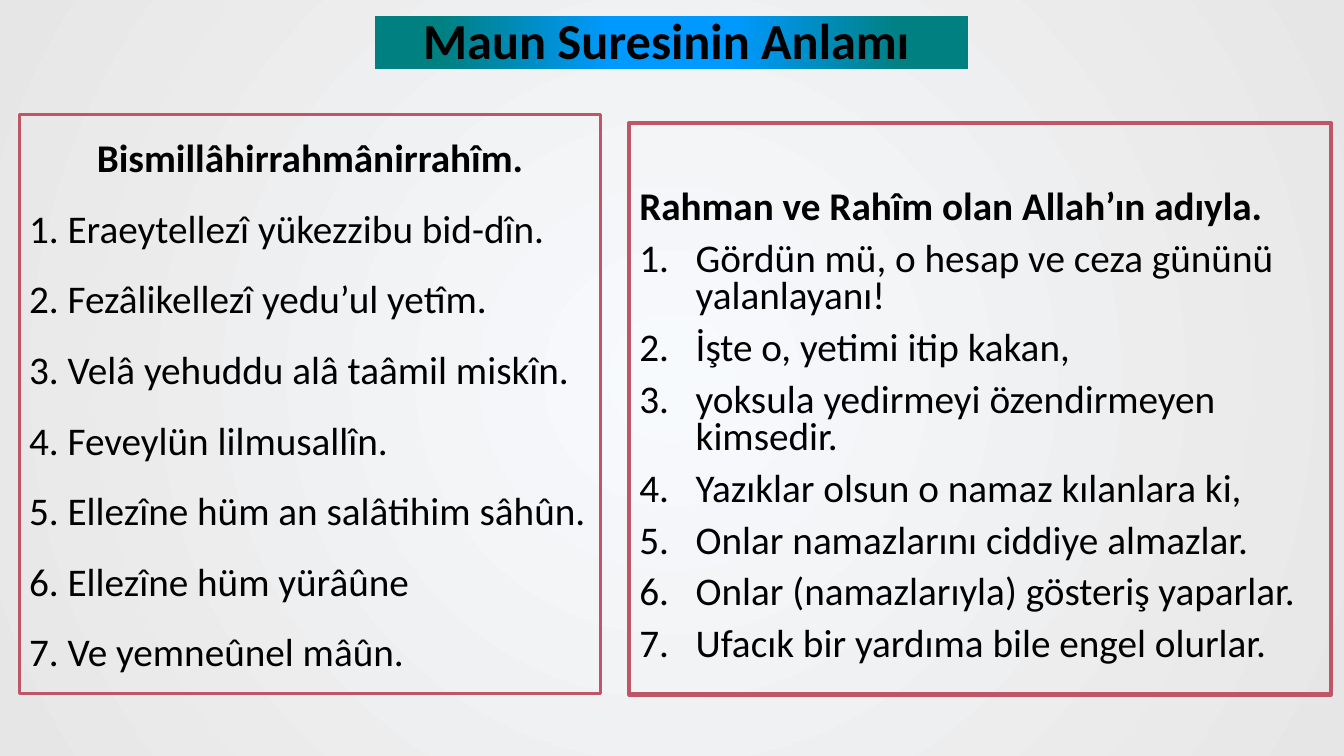
from pptx import Presentation
from pptx.dml.color import RGBColor as RGB
from pptx.enum.shapes import MSO_SHAPE as Shape
from pptx.enum.text import MSO_ANCHOR as Anchor, MSO_AUTO_SIZE as Fit, PP_ALIGN as Align
from pptx.oxml.ns import qn
from pptx.util import Inches, Pt
from lxml.etree import SubElement as Sub

TITLE = "Maun Suresinin Anlamı"
VERSES = {
    "head": "Bismillâhirrahmânirrahîm.",
    "lines": [
        "Eraeytellezî yükezzibu bid-dîn.",
        "Fezâlikellezî yedu’ul yetîm.",
        "Velâ yehuddu alâ taâmil miskîn.",
        "Feveylün lilmusallîn.",
        "Ellezîne hüm an salâtihim sâhûn.",
        "Ellezîne hüm yürâûne",
        "Ve yemneûnel mâûn.",
    ],
}
MEANING = {
    "head": "Rahman ve Rahîm olan Allah’ın adıyla.",
    "lines": [
        "Gördün mü, o hesap ve ceza gününü yalanlayanı!",
        "İşte o, yetimi itip kakan,",
        "yoksula yedirmeyi özendirmeyen kimsedir.",
        "Yazıklar olsun o namaz kılanlara ki,",
        "Onlar namazlarını ciddiye almazlar.",
        "Onlar (namazlarıyla) gösteriş yaparlar.",
        "Ufacık bir yardıma bile engel olurlar.",
    ],
}
THEME = {
    "font": "Calibri", "ink": "000000", "edge": "BE5667",
    "title": 36, "text": 28,
    "back": [(0, "F7FAFD"), (1, "E7E6E6")],
    "bar": [(0.21, "0099FF"), (0.78, "008080")],
}
SPOTS = {
    "title": (4.07, 0.04, 5.08, 0.71),
    "verses": (0.19, 1.14, 5.77, 5.74),
    "meaning": (6.24, 1.22, 6.96, 5.67),
}
BARS = [((6.4, -2.52, 0.52, 5.88), False), ((6.58, -2.34, 0.18, 5.86), True)]
HANG = Inches(0.56)


def place(shape, spot):
    for name, size in zip(("left", "top", "width", "height"), spot):
        setattr(shape, name, Inches(size))


def blend(fill, root, stops, focus):
    """Give a fill a round gradient centred on focus (left, top, right, bottom)."""
    fill.gradient()
    for stop, (spot, tint) in zip(fill.gradient_stops, stops):
        stop.position = spot
        stop.color.rgb = RGB.from_string(tint)
    grad = root.xpath(".//a:gradFill")[0]
    grad.remove(grad.find(qn("a:lin")))
    ring = Sub(grad, qn("a:path"), {"path": "circle"})
    Sub(ring, qn("a:fillToRect"), {k: str(v * 1000) for k, v in zip("ltrb", focus)})


def style(para, size, bold=False, **form):
    for name, value in form.items():
        setattr(para, name, value)
    look = {"name": THEME["font"], "size": Pt(size), "bold": bold}
    for name, value in look.items():
        setattr(para.font, name, value)
    para.font.color.rgb = RGB.from_string(THEME["ink"])


def indent(para, left, hang, mark, **kind):
    props = para._p.get_or_add_pPr()
    props.set("marL", str(left))
    props.set("indent", str(-hang))
    Sub(props, qn(mark), kind)


def frame(shape, width):
    shape.line.color.rgb = RGB.from_string(THEME["edge"])
    shape.line.width = Pt(width)


def write(shape, texts):
    """Put one paragraph per text in the shape and return the paragraphs."""
    text = shape.text_frame
    text.text = "\n".join(texts)
    text.word_wrap = True
    text.auto_size = Fit.NONE
    return text.paragraphs


def add_bar(slide, spot, flip):
    bar = slide.shapes.add_shape(Shape.RECTANGLE, 0, 0, 0, 0)
    place(bar, spot)
    bar.rotation = 270
    bar.shadow.inherit = False
    bar.line.fill.background()
    blend(bar.fill, bar._element, THEME["bar"], (50, -80, 50, 180))
    if flip:
        bar._element.spPr.find(qn("a:xfrm")).set("flipV", "1")


def add_verses(slide):
    box = slide.shapes.add_shape(Shape.RECTANGLE, 0, 0, 0, 0)
    place(box, SPOTS["verses"])
    box.shadow.inherit = False
    box.fill.background()
    frame(box, 2.25)
    rows = [f"{i}. {line}" for i, line in enumerate(VERSES["lines"], 1)]
    head, *rest = write(box, [VERSES["head"], *rows])
    box.text_frame.vertical_anchor = Anchor.MIDDLE
    style(head, THEME["text"], True, alignment=Align.CENTER)
    for para in rest:
        style(para, THEME["text"], alignment=Align.LEFT, line_spacing=1.5)


def fill_meaning(body):
    place(body, SPOTS["meaning"])
    frame(body, 3)
    head, *rest = write(body, [MEANING["head"], *MEANING["lines"]])
    body.text_frame.margin_top = Inches(0.67)
    indent(head, 0, 0, "a:buNone")
    style(head, THEME["text"], True, line_spacing=0.8, space_before=Pt(0))
    for para in rest:
        indent(para, HANG, HANG, "a:buAutoNum", type="arabicPeriod")
        style(para, THEME["text"], line_spacing=0.8, space_before=Pt(10))


def fill_title(title):
    place(title, SPOTS["title"])
    para = write(title, [TITLE])[0]
    title.text_frame.word_wrap = False
    title.text_frame.vertical_anchor = Anchor.MIDDLE
    style(para, THEME["title"], True, alignment=Align.CENTER)


def main():
    deck = Presentation()
    deck.slide_width, deck.slide_height = Inches(13.33), Inches(7.5)
    slide = deck.slides.add_slide(deck.slide_layouts[1])
    blend(slide.background.fill, slide._element, THEME["back"], (50, 50, 50, 50))
    title, body = slide.placeholders
    fill_meaning(body)
    for spot, flip in BARS:
        add_bar(slide, spot, flip)
    fill_title(title)
    slide.shapes._spTree.append(title._element)  # the title lies over its bars
    add_verses(slide)
    deck.save("out.pptx")


if __name__ == "__main__":
    main()
